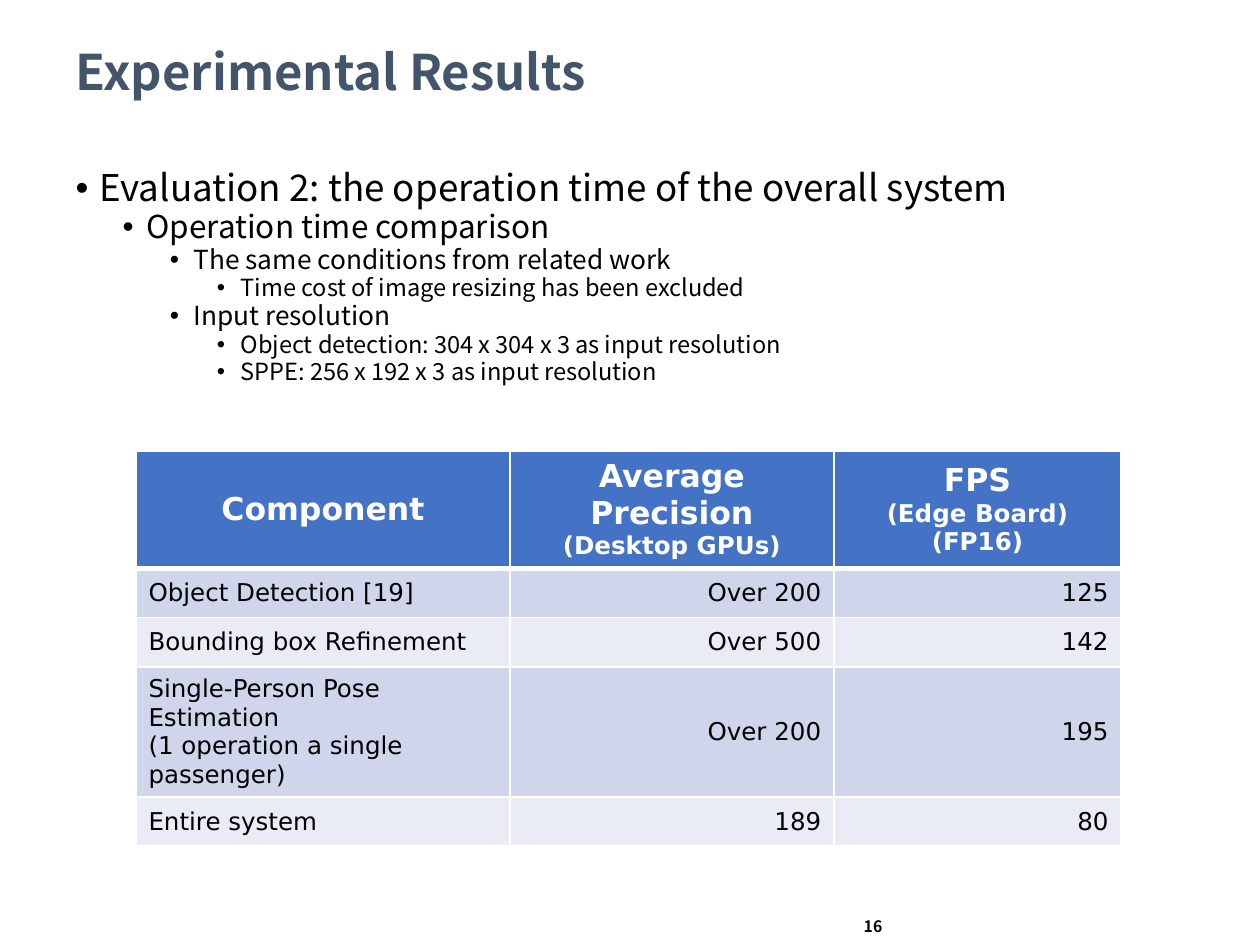
"""Build the experimental results slide with its outline and timing table."""
from dataclasses import dataclass

import lxml.etree
import pptx
import pptx.dml.color
import pptx.enum.text
import pptx.oxml.ns
import pptx.util

Cm = pptx.util.Cm
Pt = pptx.util.Pt
ALIGN = pptx.enum.text.PP_ALIGN
MIDDLE = pptx.enum.text.MSO_ANCHOR.MIDDLE
qn = pptx.oxml.ns.qn


@dataclass(frozen=True)
class Theme:
    """Colours, fonts and type sizes."""
    title: str = "44546A"
    text: str = "000000"
    white: str = "FFFFFF"
    header: str = "4472C4"
    bands: tuple = ("CFD5EA", "E9EBF5")
    font: str = "Noto Sans CJK KR"
    table_font: str = "DejaVu Sans"
    title_size: float = 28
    level_sizes: tuple = (21, 18, 15, 13.5)
    head_size: float = 18
    cell_size: float = 14
    number_size: float = 9


@dataclass(frozen=True)
class Box:
    """Position and size in centimetres."""
    left: float
    top: float
    width: float
    height: float

    def lengths(self) -> tuple:
        """Return the four lengths."""
        return tuple(Cm(v) for v in (self.left, self.top, self.width, self.height))


@dataclass(frozen=True)
class Item:
    """One outline entry."""
    level: int
    text: str


THEME = Theme()
ITEMS = (
    Item(0, "Evaluation 2: the operation time of the overall system"),
    Item(1, "Operation time comparison"),
    Item(2, "The same conditions from related work"),
    Item(3, "Time cost of image resizing has been excluded"),
    Item(2, "Input resolution"),
    Item(3, "Object detection: 304 x 304 x 3 as input resolution"),
    Item(3, "SPPE: 256 x 192 x 3 as input resolution"),
)
ROWS = (
    ("Component", "Average Precision\n(Desktop GPUs)", "FPS\n(Edge Board)\n(FP16)"),
    ("Object Detection [19]", "Over 200", "125"),
    ("Bounding box Refinement", "Over 500", "142"),
    ("Single-Person Pose Estimation\n(1 operation a single passenger)", "Over 200", "195"),
    ("Entire system", "189", "80"),
)
COLUMN_WIDTHS = (7.54, 6.53, 5.79)
ROW_HEIGHTS = (1.98, 0.99, 0.99, 1.3, 0.99)


def rgb(color: str) -> pptx.dml.color.RGBColor:
    """Turn a hex string into a colour."""
    return pptx.dml.color.RGBColor.from_string(color)


def format_runs(p, font: str, size: float, color: str, bold: bool = False) -> None:
    """Format every run of a paragraph."""
    for r in p.runs:
        r.font.name = font
        r.font.size = Pt(size)
        r.font.bold = bold
        r.font.color.rgb = rgb(color)


def place(sp, box: Box) -> None:
    """Move and size a shape."""
    sp.left, sp.top, sp.width, sp.height = box.lengths()


def fill_title(sp, text: str) -> None:
    """Write the slide title."""
    place(sp, Box(1.27, 0.64, 22.86, 1.73))
    tf = sp.text_frame
    tf.text = text
    tf.auto_size = pptx.enum.text.MSO_AUTO_SIZE.NONE
    tf.vertical_anchor = MIDDLE
    p = tf.paragraphs[0]
    p.alignment = ALIGN.LEFT
    p.line_spacing = 0.9
    format_runs(p, THEME.font, THEME.title_size, THEME.title, True)


def fill_outline(sp, items: tuple[Item, ...]) -> None:
    """Write the bulleted outline."""
    place(sp, Box(1.27, 3.38, 22.86, 13.08))
    tf = sp.text_frame
    tf.text = "\n".join(item.text for item in items)
    tf.auto_size = pptx.enum.text.MSO_AUTO_SIZE.NONE
    tf.margin_top = Cm(0.05)
    for i, (item, p) in enumerate(zip(items, tf.paragraphs)):
        p.level = item.level
        ppr = p._p.get_or_add_pPr()
        ppr.set("marL", str(Cm(0.48 + 0.95 * item.level)))
        ppr.set("indent", str(Cm(-0.48)))
        lxml.etree.SubElement(ppr, qn("a:buChar")).set("char", "•")
        p.line_spacing = 0.9
        p.space_before = Pt(0.8 if i else 0)
        format_runs(p, THEME.font, THEME.level_sizes[item.level], THEME.text)


def set_borders(cell, top: float, bottom: float) -> None:
    """Draw the white borders of a cell."""
    tcpr = cell._tc.get_or_add_tcPr()
    for i, (side, width) in enumerate(zip("LRTB", (1, 1, top, bottom))):
        ln = lxml.etree.Element(qn(f"a:ln{side}"), w=str(Pt(width)))
        fill = lxml.etree.SubElement(ln, qn("a:solidFill"))
        lxml.etree.SubElement(fill, qn("a:srgbClr")).set("val", THEME.white)
        tcpr.insert(i, ln)


def fill_cell(cell, text: str, row: int, column: int) -> None:
    """Write and style one table cell."""
    head = row == 0
    cell.text_frame.text = text
    cell.vertical_anchor = MIDDLE
    cell.fill.solid()
    cell.fill.fore_color.rgb = rgb(THEME.header if head else THEME.bands[(row - 1) % 2])
    set_borders(cell, 3 if row == 1 else 1, 3 if head else 1)
    for i, p in enumerate(cell.text_frame.paragraphs):
        p.alignment = ALIGN.CENTER if head else ALIGN.RIGHT if column else ALIGN.LEFT
        size = THEME.head_size if head and i == 0 else THEME.cell_size
        format_runs(p, THEME.table_font, size, THEME.white if head else THEME.text, head)


def add_timing_table(s, box: Box) -> None:
    """Add the table of component speeds."""
    table = s.shapes.add_table(len(ROWS), len(COLUMN_WIDTHS), *box.lengths()).table
    for column, width in zip(table.columns, COLUMN_WIDTHS):
        column.width = Cm(width)
    for row, height in zip(table.rows, ROW_HEIGHTS):
        row.height = Cm(height)
    for i, texts in enumerate(ROWS):
        for j, text in enumerate(texts):
            fill_cell(table.cell(i, j), text, i, j)


def add_page_number(s, text: str, box: Box) -> None:
    """Add the page number."""
    tf = s.shapes.add_textbox(*box.lengths()).text_frame
    tf.word_wrap = True
    tf.text = text
    p = tf.paragraphs[0]
    p.alignment = ALIGN.CENTER
    format_runs(p, THEME.font, THEME.number_size, THEME.text, True)


def main() -> None:
    """Build and save the slide."""
    prs = pptx.Presentation()
    prs.slide_width, prs.slide_height = Cm(25.4), Cm(19.05)
    s = prs.slides.add_slide(prs.slide_layouts[1])
    fill_title(s.shapes.title, "Experimental Results")
    fill_outline(s.placeholders[1], ITEMS)
    add_page_number(s, "16", Box(15.67, 18.36, 3.86, 0.69))
    add_timing_table(s, Box(2.74, 9.09, sum(COLUMN_WIDTHS), sum(ROW_HEIGHTS)))
    prs.save("out.pptx")


if __name__ == "__main__":
    main()
